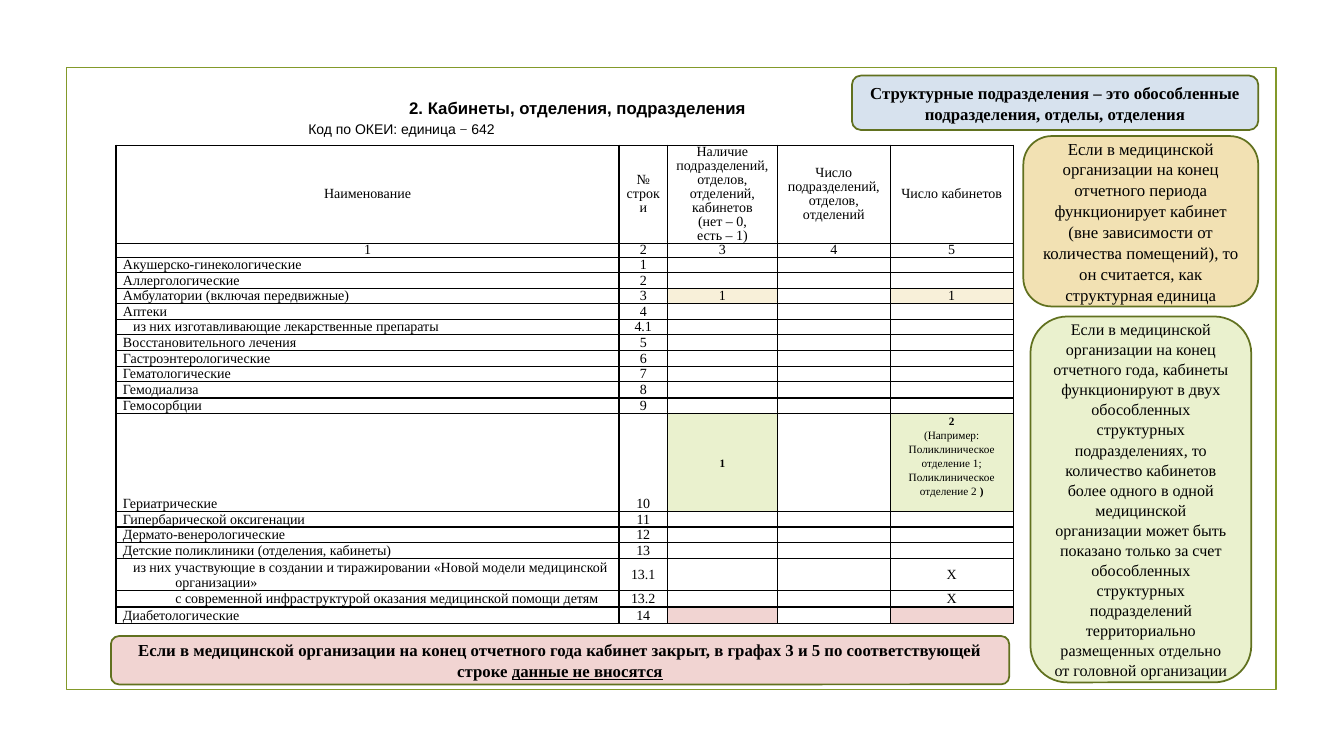
from lxml.etree import SubElement
from pptx import Presentation
from pptx.dml.color import RGBColor
from pptx.enum.shapes import MSO_SHAPE
from pptx.enum.text import MSO_ANCHOR, PP_ALIGN
from pptx.oxml import parse_xml
from pptx.oxml.ns import nsdecls, qn
from pptx.util import Pt

PX = 9144
SERIF = "Times New Roman"
SANS = "Arial"
BLACK = "000000"
OLIVE = "61711F"
SAND, GREEN, PINK = "F8F0D9", "EAF1CE", "F1D4D2"

COLUMNS = [499, 48, 109, 112, 122]
ROW_HEIGHT = 14
TALL_ROWS = {0: 97, 8: 16, 10: 16, 12: 97, 15: 16, 16: 32, 17: 16, 18: 16}
NATURAL_SPACING_FROM = 15
HEADINGS = [
    "Наименование",
    "№\vстроки",
    "Наличие подразделений,\vотделов, отделений, кабинетов\v(нет – 0,\vесть – 1)",
    "Число\vподразделений,\vотделов,\vотделений",
    "Число кабинетов",
]
ROOMS = [
    ("Акушерско-гинекологические", "1"),
    ("Аллергологические", "2"),
    ("Амбулатории (включая передвижные)", "3", "1", "", "1"),
    ("Аптеки", "4"),
    ("из них изготавливающие лекарственные препараты", "4.1"),
    ("Восстановительного лечения", "5"),
    ("Гастроэнтерологические", "6"),
    ("Гематологические", "7"),
    ("Гемодиализа", "8"),
    ("Гемосорбции", "9"),
    ("Гериатрические", "10", "1", "",
     "2\n(Например: Поликлиническое отделение 1;\nПоликлиническое отделение 2 "),
    ("Гипербарической оксигенации", "11"),
    ("Дермато-венерологические", "12"),
    ("Детские поликлиники (отделения, кабинеты)", "13"),
    ("из них участвующие в создании и тиражировании «Новой модели медицинской\nорганизации»",
     "13.1", "", "", "Х"),
    ("с современной инфраструктурой оказания медицинской помощи детям",
     "13.2", "", "", "Х"),
    ("Диабетологические", "14"),
]
INDENTS = {"из них": 10, "организации»": 52, "с современной": 52}
ROW_FILLS = {4: SAND, 12: GREEN, 18: PINK}
EXAMPLE_ROW = 12


def px(length):
    return length * PX


def color(value):
    return RGBColor.from_string(value)


def style(font, size, name=SERIF, bold=False):
    font.size = Pt(size)
    font.name = name
    font.bold = bold
    font.color.rgb = color(BLACK)


def indent(para, length):
    para._p.get_or_add_pPr().set("marL", str(px(length)))


def border_cell(cell):
    properties = cell._tc.get_or_add_tcPr()
    for index, side in enumerate(("lnL", "lnR", "lnT", "lnB")):
        line = parse_xml(f'<a:{side} {nsdecls("a")} w="{Pt(1)}"/>')
        fill = SubElement(line, qn("a:solidFill"))
        SubElement(fill, qn("a:srgbClr"), val=BLACK)
        properties.insert(index, line)


def fill_cell(cell, text, row, column):
    cell.margin_left = cell.margin_right = px(7)
    cell.margin_top = cell.margin_bottom = 0
    example = row == EXAMPLE_ROW and column > 1
    middle = row == 0 or column > 1 or row in (16, 17) and column == 1
    cell.vertical_anchor = MSO_ANCHOR.MIDDLE if middle else MSO_ANCHOR.BOTTOM
    cell.text = text
    for index, para in enumerate(cell.text_frame.paragraphs):
        left_aligned = column == 0 and row > 1
        para.alignment = PP_ALIGN.LEFT if left_aligned else PP_ALIGN.CENTER
        if row < NATURAL_SPACING_FROM or not text:
            para.line_spacing = Pt(10)
        for opening, length in INDENTS.items():
            if left_aligned and para.text.startswith(opening):
                indent(para, length)
        style(para.font, 8 if example else 10, bold=example and index == 0)
    if example and column == 4:
        span = para.add_run()
        span.text = ")"
        span.font.bold = True
        cell.margin_bottom = px(14)
    if row in ROW_FILLS and column in (2, 4):
        cell.fill.solid()
        cell.fill.fore_color.rgb = color(ROW_FILLS[row])
    else:
        cell.fill.background()
    border_cell(cell)


def add_rooms_table(page, left, top):
    rows = [HEADINGS, "12345", *ROOMS]
    heights = [TALL_ROWS.get(index, ROW_HEIGHT) for index in range(len(rows))]
    frame = page.shapes.add_table(len(rows), len(COLUMNS), px(left), px(top),
                                  px(sum(COLUMNS)), px(sum(heights)))
    table = frame.table
    table.first_row = table.horz_banding = False
    for column, width in enumerate(COLUMNS):
        table.columns[column].width = px(width)
    for row, texts in enumerate(rows):
        table.rows[row].height = px(heights[row])
        for column in range(len(COLUMNS)):
            text = texts[column] if column < len(texts) else ""
            fill_cell(table.cell(row, column), text, row, column)


def add_heading(page, left, top, width, height):
    box = page.shapes.add_textbox(px(left), px(top), px(width), px(height))
    frame = box.text_frame
    frame.word_wrap = True
    frame.margin_top = px(7)
    title = frame.paragraphs[0]
    title.text = "2. Кабинеты, отделения, подразделения"
    indent(title, 291)
    style(title.font, 12, SANS, True)
    unit = frame.add_paragraph()
    indent(unit, 191)
    unit.space_before = Pt(2)
    style(unit.font, 10, SANS)
    for text, name in (("Код по ОКЕИ: единица ", SANS), ("−", SERIF), (" 642", SANS)):
        span = unit.add_run()
        span.text = text
        span.font.name = name


def add_panel(page, left, top, width, height, line, fill=None, kind=MSO_SHAPE.ROUNDED_RECTANGLE):
    panel = page.shapes.add_shape(kind, px(left), px(top), px(width), px(height))
    panel.shadow.inherit = False
    panel.line.color.rgb = color(line)
    panel.line.width = Pt(1.25)
    if fill:
        panel.fill.solid()
        panel.fill.fore_color.rgb = color(fill)
    else:
        panel.fill.background()
    return panel


def add_note(page, box, fill, text, size=12, bold=False, underlined=""):
    panel = add_panel(page, *box, OLIVE, fill)
    frame = panel.text_frame
    frame.word_wrap = True
    frame.vertical_anchor = MSO_ANCHOR.MIDDLE
    para = frame.paragraphs[0]
    para.alignment = PP_ALIGN.CENTER
    para.line_spacing = 1.04
    style(para.font, size, bold=bold)
    para.add_run().text = text
    if underlined:
        span = para.add_run()
        span.text = underlined
        span.font.underline = True


def build_page(page):
    add_panel(page, 66, 67, 1200, 617, "83992A", kind=MSO_SHAPE.RECTANGLE)
    add_rooms_table(page, 115, 144)
    add_heading(page, 105, 90, 900, 67)
    add_note(page, (1015, 135, 233, 169), "F2E1B3",
             "Если в медицинской организации на конец отчетного периода функционирует кабинет "
             "(вне зависимости от количества помещений), то он считается, как структурная единица")
    add_note(page, (110, 631, 891, 48), PINK,
             "Если в медицинской организации на конец отчетного года кабинет закрыт, "
             "в графах 3 и 5 по соответствующей строке ",
             bold=True, underlined="данные не вносятся")
    add_note(page, (1022, 314, 219, 363), GREEN,
             "Если в медицинской организации на конец отчетного года, кабинеты функционируют "
             "в двух обособленных структурных подразделениях, то количество кабинетов более "
             "одного в одной медицинской организации может быть показано только за счет "
             "обособленных структурных подразделений территориально размещенных отдельно "
             "от головной организации", size=11.5)
    add_note(page, (845, 75, 403, 54), "D7E2EE",
             "Структурные подразделения – это обособленные подразделения, отделы, отделения",
             bold=True)


def main():
    deck = Presentation()
    deck.slide_width, deck.slide_height = px(1333), px(750)
    build_page(deck.slides.add_slide(deck.slide_layouts[6]))
    deck.save("out.pptx")


if __name__ == "__main__":
    main()
